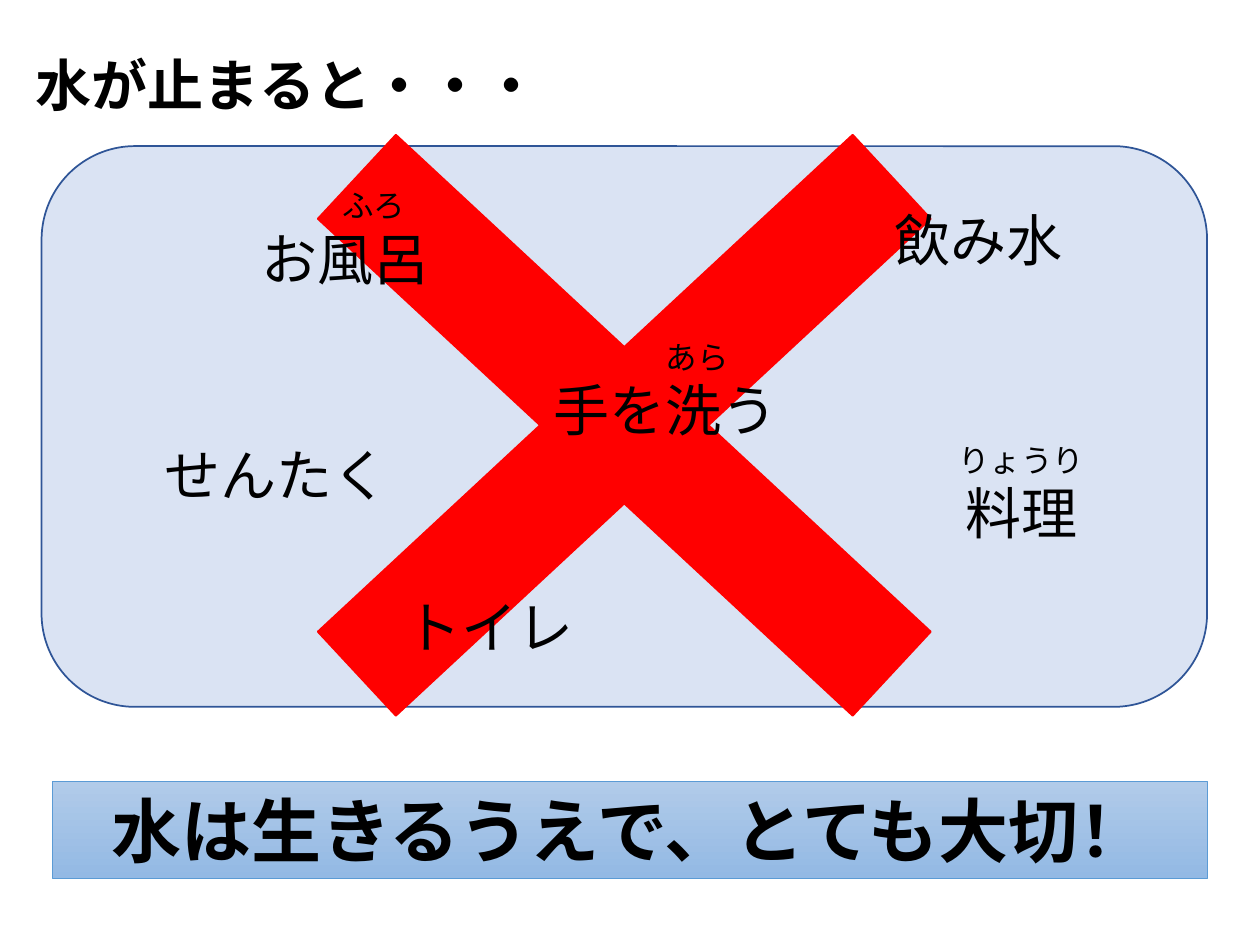
from pptx import Presentation
from pptx.dml.color import RGBColor
from pptx.enum.shapes import MSO_SHAPE
from pptx.enum.text import MSO_ANCHOR, PP_ALIGN
from pptx.util import Inches, Pt

WIDTH, HEIGHT = Inches(10), Inches(7.5)
COLUMNS, ROWS = 100, 75
BLACK = RGBColor(0x00, 0x00, 0x00)
RED = RGBColor(0xFF, 0x00, 0x00)
PALE_BLUE = RGBColor(0xDA, 0xE3, 0xF3)
NAVY = RGBColor(0x2F, 0x55, 0x97)
SKY_BLUE = RGBColor(0x5B, 0x9B, 0xD5)
BANNER_TOP = RGBColor(0xB1, 0xCB, 0xE9)
BANNER_BOTTOM = RGBColor(0x93, 0xB9, 0xE4)

READING = {"name": "Calibri", "size": Pt(18)}
WORD = {"name": "Calibri", "size": Pt(32)}
TITLE = {**WORD, "bold": True}
MESSAGE = {**TITLE, "size": Pt(40)}

TITLE_BOX = (1.8, 3.5, 61.2, 6.4)
PANEL_BOX = (3.3, 11.6, 92.5, 44.5)
BANNER_BOX = (4.2, 62, 91.6, 7.7)
CROSS_BOX = (5.4, -15.8, 81.7, 75.9)

LABELS = [
    ("お風呂", "ふろ", 32, (9.1, 2.7, 30.1, 9.4)),
    ("飲み水", None, 0, (64.4, 4.2, 19.9, 6.4)),
    ("せんたく", None, 0, (4.6, 22.9, 28.1, 6.4)),
    ("トイレ", None, 0, (21.5, 34.9, 28.1, 6.4)),
    ("料理", "りょうり", 0, (63.7, 22.9, 28.1, 9.4)),
    ("手を洗う", "あら", 36, (35.5, 14.7, 28.1, 9.4)),
]


def place(box):
    left, top, width, height = box
    return (
        round(WIDTH * left / COLUMNS),
        round(HEIGHT * top / ROWS),
        round(WIDTH * width / COLUMNS),
        round(HEIGHT * height / ROWS),
    )


def inside(outer, box):
    return (outer[0] + box[0], outer[1] + box[1], box[2], box[3])


def write(paragraph, text, font_format, alignment=PP_ALIGN.CENTER, indent=0):
    paragraph.alignment = alignment
    if indent:
        paragraph._p.get_or_add_pPr().set("marL", str(Pt(indent)))
    run = paragraph.add_run()
    run.text = text
    for attribute, value in font_format.items():
        setattr(run.font, attribute, value)
    run.font.color.rgb = BLACK


def add_text_frame(slide, box):
    frame = slide.shapes.add_textbox(*place(box)).text_frame
    frame.word_wrap = True
    return frame


def add_outlined_shape(slide, kind, box, line_color, line_width):
    shape = slide.shapes.add_shape(kind, *place(box))
    shape.shadow.inherit = False
    shape.line.color.rgb = line_color
    shape.line.width = Pt(line_width)
    return shape


def add_title(slide, box):
    frame = add_text_frame(slide, box)
    write(frame.paragraphs[0], "水が止まると・・・", TITLE, PP_ALIGN.LEFT)


def add_label(slide, box, word, reading, indent):
    frame = add_text_frame(slide, box)
    paragraph = frame.paragraphs[0]
    if reading:
        write(paragraph, reading, READING, indent=indent)
        paragraph = frame.add_paragraph()
    write(paragraph, word, WORD)


def add_water_uses(slide, box):
    panel = add_outlined_shape(slide, MSO_SHAPE.ROUNDED_RECTANGLE, box, NAVY, 1)
    cross = add_outlined_shape(
        slide, MSO_SHAPE.MATH_MULTIPLY, inside(box, CROSS_BOX), RED, 1
    )
    cross.adjustments[0] = 0.12
    for shape, color in ((panel, PALE_BLUE), (cross, RED)):
        shape.fill.solid()
        shape.fill.fore_color.rgb = color
    for word, reading, indent, label_box in LABELS:
        add_label(slide, inside(box, label_box), word, reading, indent)


def add_banner(slide, box):
    banner = add_outlined_shape(slide, MSO_SHAPE.RECTANGLE, box, SKY_BLUE, 0.5)
    banner.fill.gradient()
    banner.fill.gradient_angle = 270
    for stop, color, position in zip(
        banner.fill.gradient_stops, (BANNER_TOP, BANNER_BOTTOM), (0, 1)
    ):
        stop.color.rgb = color
        stop.position = position
    frame = banner.text_frame
    frame.word_wrap = True
    frame.vertical_anchor = MSO_ANCHOR.TOP
    write(frame.paragraphs[0], "水は生きるうえで、とても大切！", MESSAGE)


def main():
    presentation = Presentation()
    presentation.slide_width, presentation.slide_height = WIDTH, HEIGHT
    slide = presentation.slides.add_slide(presentation.slide_layouts[6])
    add_title(slide, TITLE_BOX)
    add_water_uses(slide, PANEL_BOX)
    add_banner(slide, BANNER_BOX)
    presentation.save("out.pptx")


if __name__ == "__main__":
    main()
